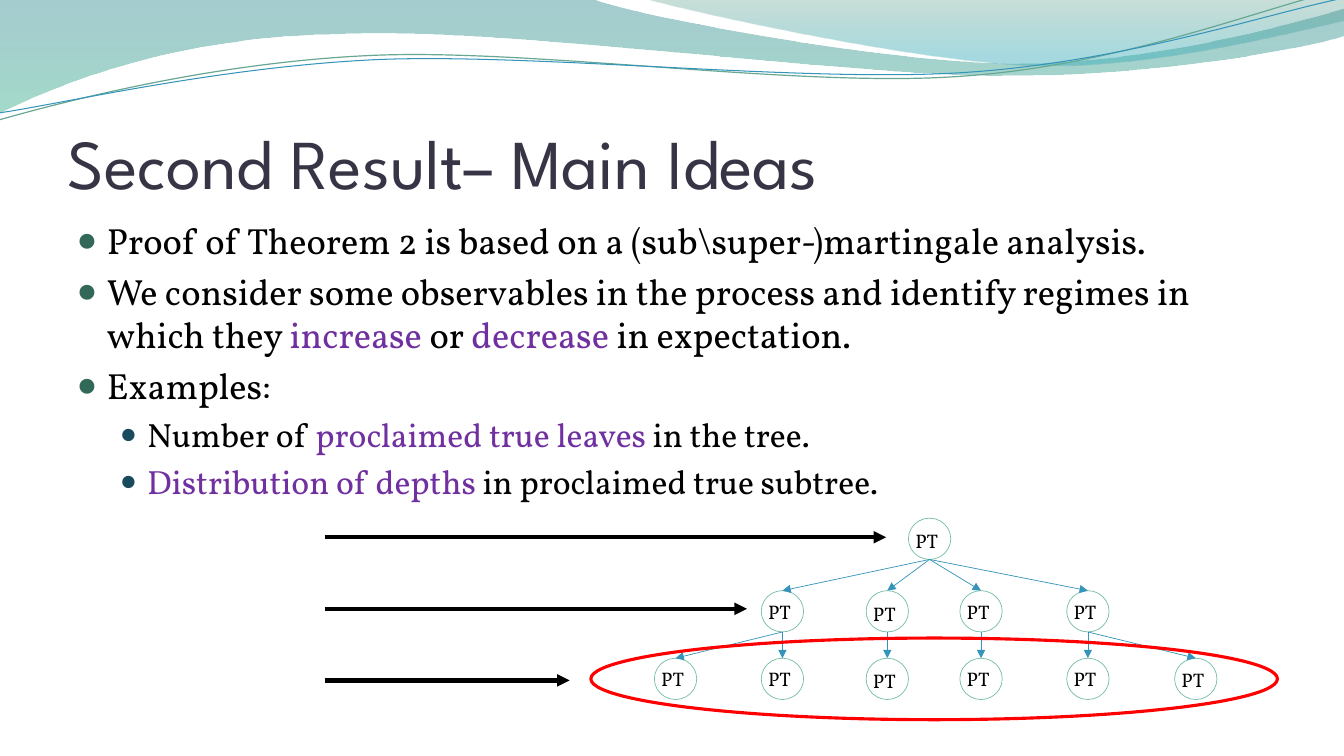
"""Build the slide on the main ideas behind the second result."""
import math

import pptx
import pptx.dml.color
import pptx.enum.shapes
import pptx.enum.text
import pptx.oxml
import pptx.oxml.ns
import pptx.util
from pptx.util import Inches

BLACK, PURPLE, WHITE, TEAL, BLUE = "000000", "7030A0", "FFFFFF", "75BDA7", "3494BA"
OVAL = pptx.enum.shapes.MSO_SHAPE.OVAL
qn = pptx.oxml.ns.qn


def rgb(code):
    return pptx.dml.color.RGBColor.from_string(code)


def add_arrow(start, end, colour, weight):
    arrow = slide.shapes.add_connector(
        pptx.enum.shapes.MSO_CONNECTOR.STRAIGHT, *map(Inches, start + end))
    arrow.line.color.rgb = rgb(colour)
    arrow.line.width = pptx.util.Pt(weight)
    outline = arrow.line._get_or_add_ln()
    outline.append(outline.makeelement(qn("a:tailEnd"), {"type": "triangle"}))
    properties = arrow._element.spPr
    properties.append(properties.makeelement(qn("a:effectLst"), {}))


presentation = pptx.Presentation()
presentation.slide_width, presentation.slide_height = Inches(13.33), Inches(7.5)
slide = presentation.slides.add_slide(presentation.slide_layouts[1])

# start point, then curves (six numbers) and straight lines (two numbers)
waves = [
    {"outline": [(0, 0), (5.87, -0.01), (6.34, 0.17, 8.84, 0.63, 10.11, 0.63),
                 (11.37, 0.63, 12.77, 0.26, 13.33, 0.09), (13.34, 0.36),
                 (13.11, 0.44, 11.59, 0.76, 9.94, 0.75),
                 (8.29, 0.75, 5.09, 0.28, 3.43, 0.34),
                 (1.72, 0.36, 0.61, 0.83, -0.02, 1.13), (0, 0)],
     "gradient": [(0, "398D96", 45), (1, "58BD9F", 55)], "tilt": 0},
    {"outline": [(6.38, -0.01), (6.79, 0.11, 9.09, 0.62, 10.25, 0.65),
                 (11.4, 0.69, 12.82, 0.32, 13.33, 0.21), (13.33, 0), (6.38, -0.01)],
     "gradient": [(0, "4F947F", 30), (0.8, "3BAFBC", 45)], "tilt": 0},
    {"outline": [(-0.01, 1.19), (0.63, 1.01, 2.1, 0.62, 3.69, 0.55),
                 (5.27, 0.48, 7.89, 0.87, 9.49, 0.76), (11.1, 0.66, 12.51, 0.08, 13.3, -0.1)],
     "stroke": ("67A793", 0.85), "tilt": -2.7},
    {"outline": [(-0.01, 1.12), (0.62, 1.03, 2.18, 0.66, 3.77, 0.59),
                 (5.37, 0.53, 7.96, 0.82, 9.55, 0.72), (11.14, 0.62, 12.55, 0.14, 13.33, -0.02)],
     "stroke": (BLUE, 0.75), "tilt": -2.7},
]
pivot_x, pivot_y = 6.65, 0.58
for wave in waves:
    cos, sin = math.cos(math.radians(wave["tilt"])), math.sin(math.radians(wave["tilt"]))
    points = []
    for piece in wave["outline"]:
        for x, y in zip(piece[::2], piece[1::2]):
            dx, dy = x - pivot_x, y - pivot_y
            points.append((Inches(pivot_x + dx * cos + dy * sin),
                           Inches(pivot_y + dy * cos - dx * sin)))
    builder = slide.shapes.build_freeform(*points[0])
    builder.add_line_segments(points[1:], close="gradient" in wave)
    ribbon = builder.convert_to_shape()
    ribbon.rotation = wave["tilt"] % 360
    ribbon.shadow.inherit = False
    segments = iter(list(ribbon._element.iter(qn("a:lnTo"))))
    for piece in wave["outline"][1:]:
        first = next(segments)
        if len(piece) == 6:
            curve = first.makeelement(qn("a:cubicBezTo"), {})
            first.addprevious(curve)
            for segment in (first, next(segments), next(segments)):
                curve.append(segment[0])
                segment.getparent().remove(segment)
    if "stroke" in wave:
        ribbon.fill.background()
        ribbon.line.color.rgb = rgb(wave["stroke"][0])
        ribbon.line.width = pptx.util.Pt(wave["stroke"][1])
        continue
    ribbon.line.fill.background()
    ribbon.fill.gradient()
    ribbon.fill.gradient_angle = 270
    for stop, (position, colour, opacity) in zip(ribbon.fill.gradient_stops, wave["gradient"]):
        stop.position = position
        stop.color.rgb = rgb(colour)
        tint = stop._gs.find(qn("a:srgbClr"))
        tint.append(tint.makeelement(qn("a:alpha"), {"val": str(opacity * 1000)}))

heading = slide.shapes.title
ideas = slide.placeholders[1]
formats = [
    (heading, {"left": 0.67, "top": 0.77, "width": 12, "height": 1.25}),
    (ideas, {"left": 0.66, "top": 2.11, "width": 12, "height": 4.8}),
    (heading.text_frame, {"margin_left": 0, "margin_top": 0.05,
                          "margin_right": 0, "margin_bottom": 0}),
]
for target, lengths in formats:
    for attribute, length in lengths.items():
        setattr(target, attribute, Inches(length))
for frame in (heading.text_frame, ideas.text_frame):
    frame.auto_size = pptx.enum.text.MSO_AUTO_SIZE.NONE
heading.text_frame.vertical_anchor = pptx.enum.text.MSO_ANCHOR.BOTTOM
heading.text_frame.text = "Second Result– Main Ideas"
heading_line = heading.text_frame.paragraphs[0]
heading_line.alignment = pptx.enum.text.PP_ALIGN.LEFT
heading_font = heading_line.runs[0].font
for attribute, value in {"name": "League Spartan", "size": pptx.util.Pt(50)}.items():
    setattr(heading_font, attribute, value)
heading_font.color.rgb = rgb("373545")

levels = [
    {"size": 26, "margin": 0.3, "hang": 0.3, "bullet": "316857", "scale": 95},
    {"size": 24, "margin": 0.7, "hang": 0.27, "bullet": "1A4A5D", "scale": 85},
]
statements = [
    (0, [("Proof of Theorem 2 is based on a (sub\\super-)martingale analysis.", BLACK)]),
    (0, [("We consider some observables in the process and identify regimes in which they ", BLACK),
         ("increase", PURPLE), (" or ", BLACK), ("decrease", PURPLE),
         (" in expectation.", BLACK)]),
    (0, [("Examples:", BLACK)]),
    (1, [("Number of ", BLACK), ("proclaimed true leaves", PURPLE), (" in the tree.", BLACK)]),
    (1, [("Distribution of depths ", PURPLE), ("in proclaimed true subtree.", BLACK)]),
]
for index, (depth, phrases) in enumerate(statements):
    frame = ideas.text_frame
    statement = frame.add_paragraph() if index else frame.paragraphs[0]
    level = levels[depth]
    statement.level = depth
    statement.space_before = pptx.util.Pt(level["size"] * 0.2)
    settings = statement._p.get_or_add_pPr()
    settings.set("marL", str(Inches(level["margin"])))
    settings.set("indent", str(-Inches(level["hang"])))
    bullet_colour = settings.makeelement(qn("a:buClr"), {})
    bullet_colour.append(settings.makeelement(qn("a:srgbClr"), {"val": level["bullet"]}))
    settings.append(bullet_colour)
    settings.append(settings.makeelement(qn("a:buSzPct"), {"val": str(level["scale"] * 1000)}))
    settings.append(settings.makeelement(qn("a:buChar"), {"char": "●"}))
    for words, colour in phrases:
        phrase = statement.add_run()
        phrase.text = words
        for attribute, value in {"name": "Vollkorn", "size": pptx.util.Pt(level["size"])}.items():
            setattr(phrase.font, attribute, value)
        phrase.font.color.rgb = rgb(colour)

node_width, node_height = 0.42, 0.41
columns = [(6.49, 0.04), (7.55, 0.04), (8.59, 0.06), (9.52, 0.04), (10.58, 0.04), (11.65, 0.05)]
tree = [(5.14, [(9.01, 0.06)]), (5.86, columns[1:5]), (6.53, columns)]
for top, row in tree:
    for left, label_drop in row:
        node = slide.shapes.add_shape(OVAL, *map(Inches, (left, top, node_width, node_height)))
        node.shadow.inherit = False
        node.fill.solid()
        node.fill.fore_color.rgb = rgb(WHITE)
        node.line.color.rgb = rgb(TEAL)
        node.line.width = pptx.util.Pt(0.5)
        label = slide.shapes.add_textbox(
            *map(Inches, (left - 0.03, top + label_drop, 0.84, 0.34)))
        label.text_frame.word_wrap = True
        mark = label.text_frame.paragraphs[0].add_run()
        mark.text = "PT"
        for attribute, value in {"name": "Vollkorn", "size": pptx.util.Pt(14)}.items():
            setattr(mark.font, attribute, value)
        mark.font.color.rgb = rgb(BLACK)

children = [[[0, 1, 2, 3]], [[0, 1], [2], [3], [4, 5]]]
for (top, parents), (child_top, offspring), families in zip(tree, tree[1:], children):
    for (left, _), family in zip(parents, families):
        for child in family:
            add_arrow((left + node_width / 2, top + node_height),
                      (offspring[child][0] + node_width / 2, child_top), BLUE, 0.5)

leaf_ring = slide.shapes.add_shape(OVAL, *map(Inches, (5.86, 6.33, 6.81, 0.81)))
leaf_ring.shadow.inherit = False
leaf_ring.fill.background()
leaf_ring.line.color.rgb = rgb("FF0000")
leaf_ring.line.width = pptx.util.Pt(2.25)

for depth, tip in enumerate((8.79, 7.41, 5.65)):
    depth_y = 5.33 + 0.71 * depth
    add_arrow((3.22, depth_y), (tip, depth_y), BLACK, 3)

presentation.save("out.pptx")
